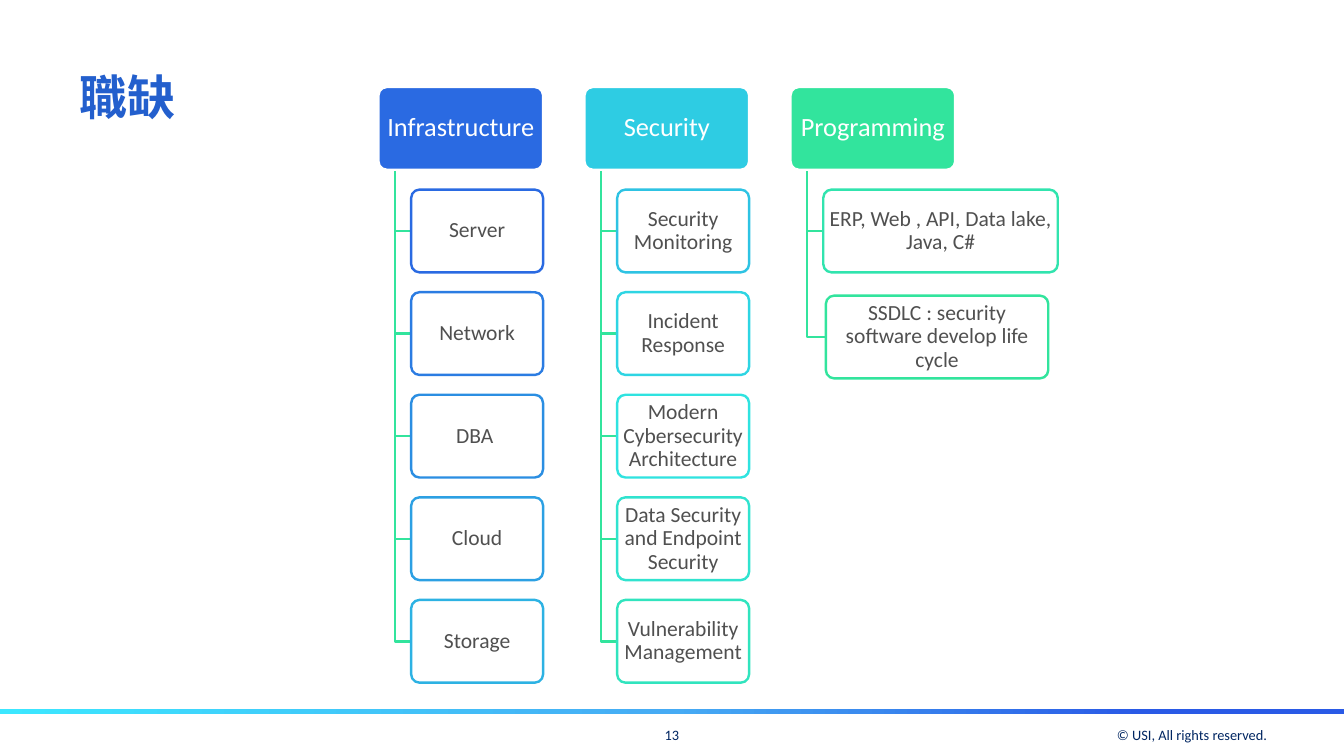
import copy

import pptx
import pptx.dml.color
import pptx.enum.shapes
import pptx.enum.text
import pptx.oxml.ns
import pptx.util

In = pptx.util.Inches
Pt = pptx.util.Pt
ALIGN = pptx.enum.text.PP_ALIGN
ANCHOR = pptx.enum.text.MSO_ANCHOR
SHAPE = pptx.enum.shapes.MSO_SHAPE

COLORS = {"white": "FFFFFF", "title": "235FCD", "footer": "002662",
          "text": "505050", "branch": "32E49D"}
BAR_STOPS = [(0, "3CE7FF"), (0.5, "46ABF4"), (0.85, "2A5AE6")]

# Organisation grid, in inches
LEFT, TOP = 4.39, 1.01
COL, ROW = 2.39, 1.19
HEAD_W, BOX_W, BOX_H = 1.91, 1.53, 0.96
STEM, INDENT = 0.19, 0.38

# Heading, heading colour, then boxes: text, outline, width, x and y offset
GROUPS = [
    ("Infrastructure", "2A6AE2", [
        ("Server", "2A6AE2", BOX_W, 0, 0),
        ("Network", "2B7CE2", BOX_W, 0, 0),
        ("DBA ", "2B8EE2", BOX_W, 0, 0),
        ("Cloud", "2CA0E3", BOX_W, 0, 0),
        ("Storage", "2DB2E3", BOX_W, 0, 0)]),
    ("Security", "2ECCE3", [
        ("Security Monitoring", "2EC3E3", BOX_W, 0, 0),
        ("Incident Response", "2ED5E3", BOX_W, 0, 0),
        ("Modern Cybersecurity Architecture", "2FE3E0", BOX_W, 0, 0),
        ("Data Security and Endpoint Security", "30E3CF", BOX_W, 0, 0),
        ("Vulnerability Management", "31E4BE", BOX_W, 0, 0)]),
    ("Programming", "32E49D", [
        ("ERP, Web , API, Data lake, Java, C#", "31E4AE", 2.72, 0, 0),
        ("SSDLC : security software develop life cycle", "32E49D", 2.58, 0.03, 0.04)]),
]


def rgb(value):
    return pptx.dml.color.RGBColor.from_string(value)


def write(sp, text, size, color, align, anchor, inset, spacing=1.0):
    """Fill a shape or text box with one paragraph; inset is (x, y) in inches."""
    tf = sp.text_frame
    tf.word_wrap = True
    tf.vertical_anchor = anchor
    tf.margin_left = tf.margin_right = In(inset[0])
    tf.margin_top = tf.margin_bottom = In(inset[1])
    p = tf.paragraphs[0]
    p.text = text
    p.alignment = align
    p.line_spacing = spacing
    p.font.name = "Calibri"
    p.font.size = Pt(size)
    p.font.color.rgb = rgb(color)
    return p


prs = pptx.Presentation()
prs.slide_width, prs.slide_height = In(15.59), In(8.77)
s = prs.slides.add_slide(prs.slide_layouts[6])

# Gradient bar and footer
bar = s.shapes.add_shape(SHAPE.RECTANGLE, 0, In(8.23), prs.slide_width, In(0.05))
bar.shadow.inherit = False
bar.line.fill.background()
bar.fill.gradient()
bar.fill.gradient_angle = 0
stops = bar._element.find(".//" + pptx.oxml.ns.qn("a:gsLst"))
stops.insert(1, copy.deepcopy(stops[0]))
for stop, (position, color) in zip(bar.fill.gradient_stops, BAR_STOPS):
    stop.position = position
    stop.color.rgb = rgb(color)

for text, left, width, align in [
        ("© USI, All rights reserved.", 12.35, 2.35, ALIGN.RIGHT),
        ("13", 7.26, 1.07, ALIGN.CENTER)]:
    box = s.shapes.add_textbox(In(left), In(8.47), In(width), In(0.15))
    write(box, text, 12, COLORS["footer"], align, ANCHOR.BOTTOM, (0, 0))

# Title
title = s.shapes.add_textbox(In(0.8), In(0.62), In(13.91), In(0.87))
p = write(title, "職缺", 40, COLORS["title"], ALIGN.LEFT, ANCHOR.MIDDLE, (0.12, 0.06), 1.2)
p.font.bold = True

# Job groups
for col, (heading, head_color, jobs) in enumerate(GROUPS):
    x = LEFT + col * COL
    cards = [(heading, x, TOP, HEAD_W, head_color, COLORS["white"], 22, COLORS["white"])]
    for row, (job, outline, width, dx, dy) in enumerate(jobs, 1):
        left, top = x + INDENT + dx, TOP + row * ROW + dy
        cards.append((job, left, top, width, COLORS["white"], outline, 18, COLORS["text"]))

        path = s.shapes.build_freeform(In(x + STEM), In(TOP + BOX_H))
        path.add_line_segments([(In(x + STEM), In(top + BOX_H / 2)),
                                (In(left), In(top + BOX_H / 2))], close=False)
        branch = path.convert_to_shape()
        branch.shadow.inherit = False
        branch.fill.background()
        branch.line.color.rgb = rgb(COLORS["branch"])
        branch.line.width = Pt(2)

    for text, left, top, width, fill, outline, size, color in cards:
        sp = s.shapes.add_shape(SHAPE.ROUNDED_RECTANGLE, In(left), In(top), In(width), In(BOX_H))
        sp.adjustments[0] = 0.1
        sp.shadow.inherit = False
        sp.fill.solid()
        sp.fill.fore_color.rgb = rgb(fill)
        sp.line.color.rgb = rgb(outline)
        sp.line.width = Pt(2)
        # The rounded corners already inset the text by about 0.03
        write(sp, text, size, color, ALIGN.CENTER, ANCHOR.MIDDLE, (0.04, 0.03), 0.9)

prs.save("out.pptx")
